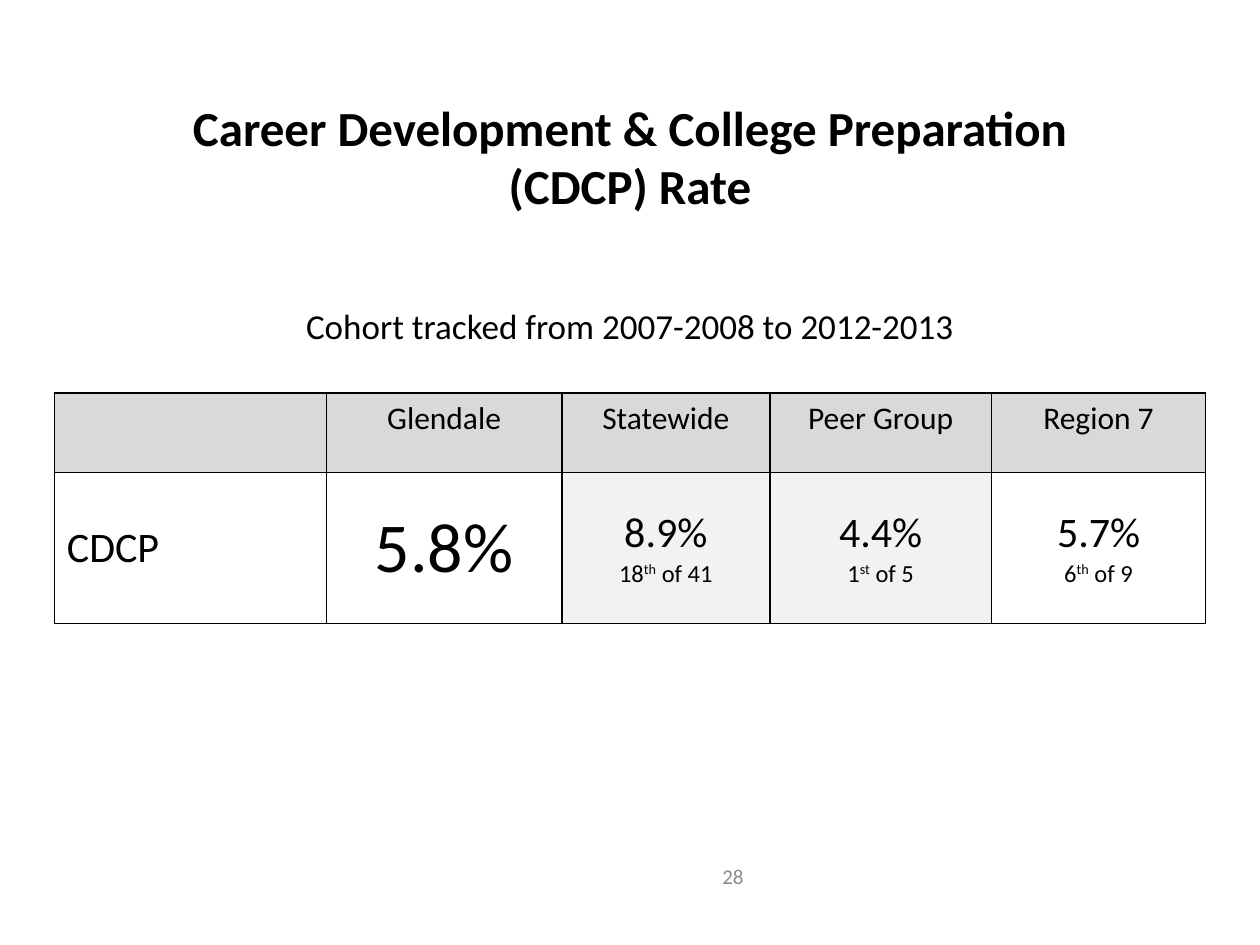
import pptx
import pptx.dml.color
import pptx.enum.text
import pptx.oxml
import pptx.util
from lxml import etree

Pt = pptx.util.Pt
ALIGN = pptx.enum.text.PP_ALIGN
ANCHOR = pptx.enum.text.MSO_ANCHOR
COLORS = {"text": "000000", "number": "8C8C8C", "header": "D9D9D9", "shade": "F2F2F2", "border": "000000"}


def rgb(name):
    return pptx.dml.color.RGBColor.from_string(COLORS[name])


def write(p, text, font="Calibri", size=18, color="text", bold=False, align=ALIGN.CENTER, raised=False):
    p.alignment = align
    r = p.add_run()
    r.text = text
    r.font.name = font
    r.font.size = Pt(size)
    r.font.bold = bold
    r.font.color.rgb = rgb(color)
    if raised:
        r.font._element.set("baseline", "30000")


class Deck:
    """Holds the style and the current slide, and adds elements to it."""

    def __init__(self, width, height):
        self.prs = pptx.Presentation()
        self.prs.slide_width, self.prs.slide_height = Pt(width), Pt(height)
        self.s = self.prs.slides.add_slide(self.prs.slide_layouts[6])

    def text(self, box, lines, anchor=ANCHOR.TOP, after=0, **style):
        tf = self.s.shapes.add_textbox(*map(Pt, box)).text_frame
        tf.word_wrap = True
        tf.vertical_anchor = anchor
        for i, line in enumerate(lines):
            p = tf.add_paragraph() if i else tf.paragraphs[0]
            p.space_after = Pt(after)
            write(p, line, **style)

    def table(self, left, top, widths, heights):
        sp = self.s.shapes.add_table(len(heights), len(widths), Pt(left), Pt(top), Pt(sum(widths)), Pt(sum(heights)))
        for col, width in zip(sp.table.columns, widths):
            col.width = Pt(width)
        for row, height in zip(sp.table.rows, heights):
            row.height = Pt(height)
        for cell in sp.table.iter_cells():
            self.border(cell)
        return sp.table

    def border(self, cell, width=1):
        tc_pr = cell._tc.get_or_add_tcPr()
        for side in ("lnL", "lnR", "lnT", "lnB"):
            ln = etree.SubElement(tc_pr, pptx.oxml.ns.qn(f"a:{side}"), w=str(Pt(width)))
            fill = etree.SubElement(ln, pptx.oxml.ns.qn("a:solidFill"))
            etree.SubElement(fill, pptx.oxml.ns.qn("a:srgbClr"), val=COLORS["border"])

    def cell(self, cell, text="", fill=None, anchor=ANCHOR.MIDDLE, rank=None, **style):
        cell.vertical_anchor = anchor
        if fill:
            cell.fill.solid()
            cell.fill.fore_color.rgb = rgb(fill)
        else:
            cell.fill.background()
        if text:
            write(cell.text_frame.paragraphs[0], text, **style)
        if rank:
            p = cell.text_frame.add_paragraph()
            for part, raised in zip(rank, (False, True, False)):
                write(p, part, size=14, raised=raised)


def main():
    deck = Deck(720, 540)
    deck.text((68, 52, 584, 75), ["Career Development & College Preparation", "(CDCP) Rate"], size=28, bold=True)
    deck.text((288, 486, 144, 28.8), ["28"], anchor=ANCHOR.MIDDLE, size=12, color="number", align=ALIGN.RIGHT)
    deck.text((74, 170.6, 572, 31.5), ["Cohort tracked from 2007-2008 to 2012-2013"], after=24, size=20)

    table = deck.table(31, 224.6, (155.5, 134.6, 118.8, 126.7, 122.4), (45.4, 86.4))
    for col, head in enumerate(("", "Glendale", "Statewide", "Peer Group", "Region 7")):
        deck.cell(table.cell(0, col), head, fill="header", anchor=ANCHOR.TOP)
    deck.cell(table.cell(1, 0), "CDCP", size=24, align=ALIGN.LEFT)
    deck.cell(table.cell(1, 1), "5.8%", size=40)
    rates = (
        ("8.9%", ("18", "th", " of 41"), "shade"),
        ("4.4%", ("1", "st", " of 5"), "shade"),
        ("5.7%", ("6", "th", " of 9"), None),
    )
    for col, (rate, rank, fill) in enumerate(rates, 2):
        deck.cell(table.cell(1, col), rate, fill=fill, rank=rank, size=24)
    deck.prs.save("out.pptx")


if __name__ == "__main__":
    main()
